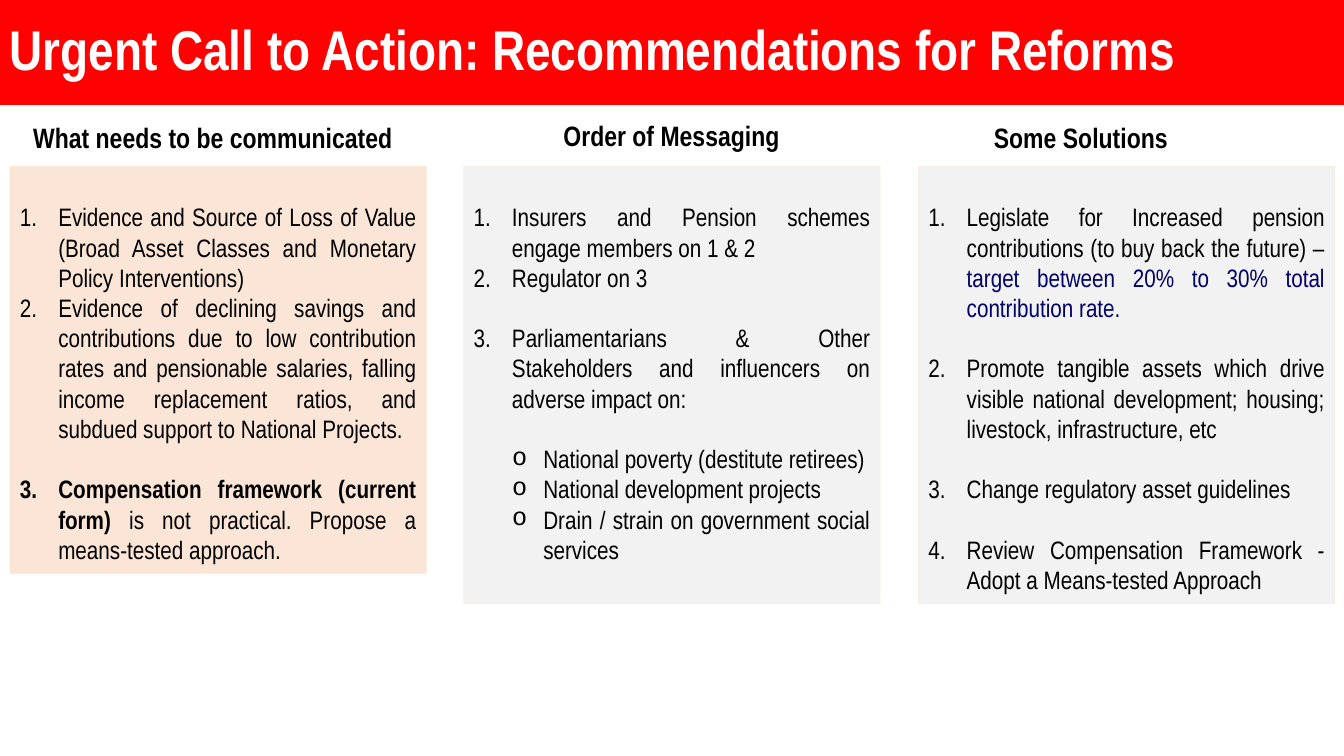
import pptx
import pptx.dml.color
import pptx.enum.shapes
import pptx.enum.text
import pptx.oxml
import pptx.oxml.ns
import pptx.util
from lxml import etree

Inches, Pt = pptx.util.Inches, pptx.util.Pt
RGBColor = pptx.dml.color.RGBColor
PP_ALIGN = pptx.enum.text.PP_ALIGN
RECTANGLE = pptx.enum.shapes.MSO_SHAPE.RECTANGLE
FIT_SHAPE = pptx.enum.text.MSO_AUTO_SIZE.SHAPE_TO_FIT_TEXT

RED = RGBColor(0xFF, 0x01, 0x01)
WHITE = RGBColor(0xFF, 0xFF, 0xFF)
BLACK = RGBColor(0, 0, 0)
NAVY = RGBColor(0, 0, 0x66)
PEACH = RGBColor(0xFB, 0xE5, 0xD6)
GREY = RGBColor(0xF2, 0xF2, 0xF2)
ORANGE = RGBColor(0xFF, 0xCC, 0x99)
FONT = "Arial Narrow"
LINE_GAP = Pt(21.6)

TITLE = "Urgent Call to Action: Recommendations for Reforms"

# Item: (list level, gap before, [(text, bold, colour), ...])
COLUMNS = [
    {
        "heading": "What needs to be communicated", "heading_at": (0, 1.15),
        "panel_left": 0.1, "panel_height": 4.04, "fill": PEACH,
        "items": [
            ("number", False, [("Evidence and Source of Loss of Value (Broad Asset Classes "
                                "and Monetary Policy Interventions)", False, BLACK)]),
            ("number", False, [("Evidence of declining savings and contributions due to low "
                                "contribution rates and pensionable salaries, falling income "
                                "replacement ratios, and subdued support to National Projects.",
                                False, BLACK)]),
            ("number", True, [("Compensation framework (current form) ", True, BLACK),
                              ("is not practical. Propose a means-tested approach.",
                               False, BLACK)]),
        ],
    },
    {
        "heading": "Order of Messaging", "heading_at": (4.55, 1.13),
        "panel_left": 4.6, "panel_height": 4.34, "fill": GREY,
        "items": [
            ("number", False, [("Insurers and Pension schemes engage members on 1 & 2",
                                False, BLACK)]),
            ("number", False, [("Regulator on 3", False, BLACK)]),
            ("number", True, [("Parliamentarians & Other Stakeholders and influencers on "
                               "adverse impact on:", False, BLACK)]),
            ("circle", True, [("National poverty (destitute retirees)", False, BLACK)]),
            ("circle", False, [("National development projects", False, BLACK)]),
            ("circle", False, [("Drain / strain on government social services",
                                False, BLACK)]),
        ],
    },
    {
        "heading": "Some Solutions", "heading_at": (8.61, 1.15),
        "panel_left": 9.11, "panel_height": 4.34, "fill": GREY,
        "items": [
            ("number", False, [("Legislate for Increased pension contributions (to buy back "
                                "the future) – ", False, BLACK),
                               ("target between 20% to 30% total contribution rate.",
                                False, NAVY)]),
            ("number", True, [("Promote tangible assets which drive visible national "
                               "development; housing; livestock, infrastructure, etc",
                               False, BLACK)]),
            ("number", True, [("Change regulatory asset guidelines", False, BLACK)]),
            ("number", True, [("Review Compensation Framework - Adopt a Means-tested Approach",
                               False, BLACK)]),
        ],
    },
]

# Left margin and hanging indent, then the bullet elements
LIST_LEVELS = {
    "number": (0.38, -0.38, [("a:buFont", {"typeface": "+mj-lt"}),
                             ("a:buAutoNum", {"type": "arabicPeriod"})]),
    "circle": (0.69, -0.31, [("a:buFont", {"typeface": "Courier New"}),
                             ("a:buChar", {"char": "o"})]),
}


def style_font(font, size, bold=None, color=None):
    font.name = FONT
    font.size = Pt(size)
    if bold is not None:
        font.bold = bold
    if color is not None:
        font.color.rgb = color


def set_list_level(paragraph, level):
    margin, indent, bullets = LIST_LEVELS[level]
    properties = paragraph._p.get_or_add_pPr()
    properties.set("marL", str(Inches(margin)))
    properties.set("indent", str(Inches(indent)))
    for tag, attributes in bullets:
        etree.SubElement(properties, pptx.oxml.ns.qn(tag), attributes)


def add_rectangle(slide, left, top, width, height, fill):
    rectangle = slide.shapes.add_shape(
        RECTANGLE, Inches(left), Inches(top), Inches(width), Inches(height))
    rectangle.shadow.inherit = False
    rectangle.fill.solid()
    rectangle.fill.fore_color.rgb = fill
    rectangle.line.fill.background()
    return rectangle


def add_title(slide):
    banner = add_rectangle(slide, 0, -0.01, 13.33, 1.05, RED)
    banner.text_frame.vertical_anchor = pptx.enum.text.MSO_ANCHOR.MIDDLE
    paragraph = banner.text_frame.paragraphs[0]
    paragraph.text = TITLE
    paragraph.alignment = PP_ALIGN.LEFT
    paragraph.line_spacing = 0.9
    style_font(paragraph.font, 40, True, WHITE)


def add_heading(slide, column):
    left, top = column["heading_at"]
    heading = slide.shapes.add_textbox(
        Inches(left), Inches(top), Inches(4.22), Inches(0.44))
    heading.text_frame.word_wrap = True
    heading.text_frame.auto_size = FIT_SHAPE
    paragraph = heading.text_frame.paragraphs[0]
    paragraph.text = column["heading"]
    paragraph.alignment = PP_ALIGN.CENTER
    style_font(paragraph.font, 20, True, BLACK)


def add_panel(slide, column):
    panel = add_rectangle(slide, column["panel_left"], 1.65, 4.13,
                          column["panel_height"], column["fill"])
    panel.line.color.rgb = ORANGE
    panel.line.width = Pt(0.75)
    line_color = panel.line._ln.find(".//" + pptx.oxml.ns.qn("a:srgbClr"))
    etree.SubElement(line_color, pptx.oxml.ns.qn("a:alpha"), {"val": "17000"})

    frame = panel.text_frame
    frame.word_wrap = True
    frame.auto_size = FIT_SHAPE
    frame.vertical_anchor = pptx.enum.text.MSO_ANCHOR.TOP
    frame.margin_top = Inches(0.35)
    for index, (level, gap_before, runs) in enumerate(column["items"]):
        paragraph = frame.add_paragraph() if index else frame.paragraphs[0]
        paragraph.alignment = PP_ALIGN.JUSTIFY
        if gap_before:
            paragraph.space_before = LINE_GAP
        set_list_level(paragraph, level)
        style_font(paragraph.font, 18)
        for text, bold, color in runs:
            run = paragraph.add_run()
            run.text = text
            run.font.bold = bold
            run.font.color.rgb = color


def main():
    presentation = pptx.Presentation()
    presentation.slide_width = Inches(13.33)
    presentation.slide_height = Inches(7.5)
    slide = presentation.slides.add_slide(presentation.slide_layouts[6])
    add_title(slide)
    for column in COLUMNS:
        add_panel(slide, column)
        add_heading(slide, column)
    presentation.save("out.pptx")


if __name__ == "__main__":
    main()
